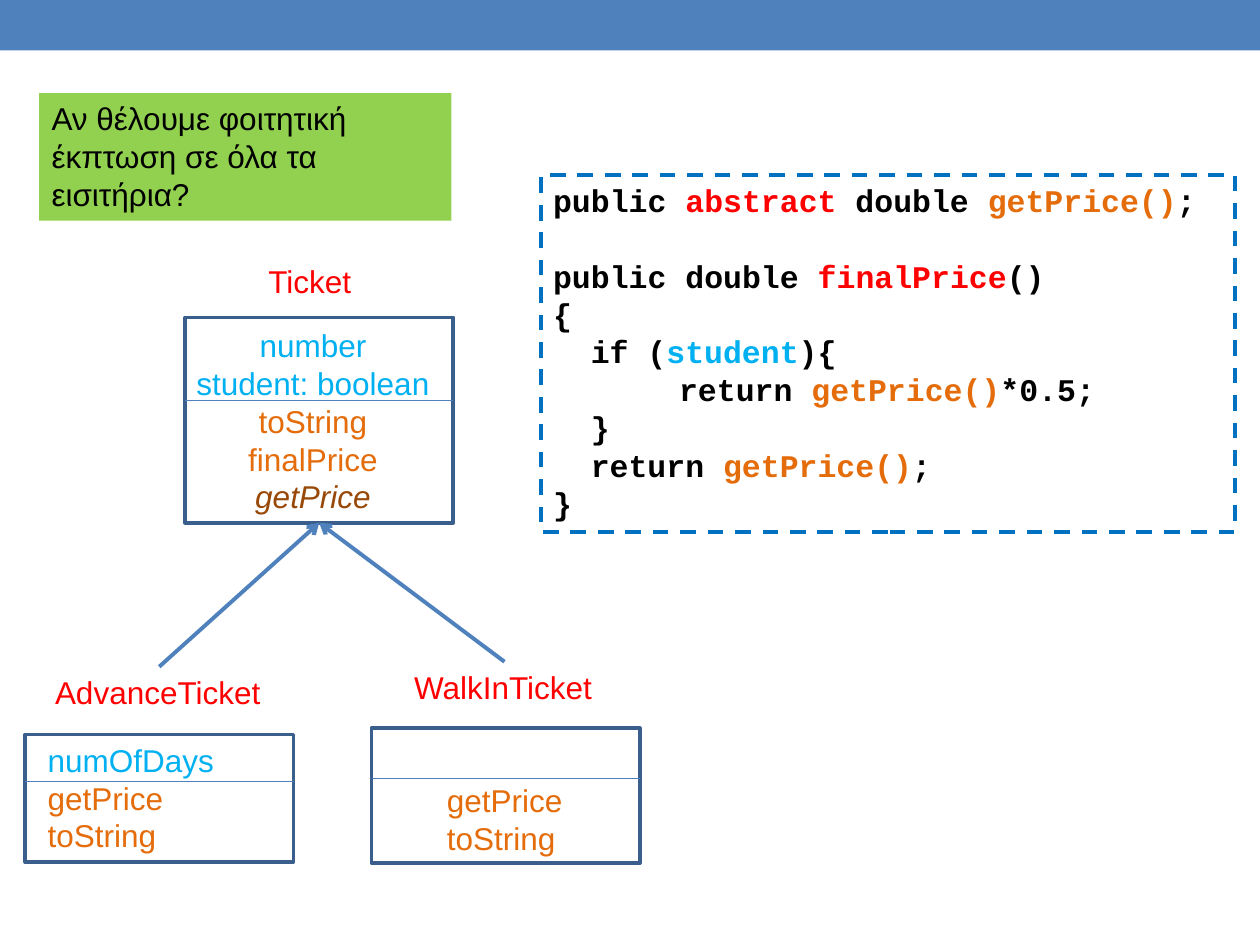
from lxml.etree import SubElement
from pptx import Presentation
from pptx.dml.color import RGBColor
from pptx.enum.dml import MSO_LINE
from pptx.enum.shapes import MSO_CONNECTOR, MSO_SHAPE
from pptx.enum.text import MSO_ANCHOR, MSO_AUTO_SIZE, PP_ALIGN
from pptx.oxml.ns import qn
from pptx.util import Cm, Pt

COLORS = {
    "black": "000000",
    "red": "FF0000",
    "cyan": "00B0F0",
    "orange": "E46C0A",
    "brown": "984807",
    "blue": "4F81BD",
    "border": "3A5F8C",
    "dash": "0070C0",
    "green": "92D050",
}
CLASS_WIDTH = 5.41
LABEL_HEIGHT = 1.02
LINE_HEIGHT = Pt(21.6)
STEP = 0.76  # width of two code characters

# Each code line: indent in cm, then (text, colour) runs
CODE = [
    (0, [("public ", "black"), ("abstract", "red"), (" double ", "black"),
         ("getPrice()", "orange"), (";", "black")]),
    (0, [("public double ", "black"), ("finalPrice", "red"), ("()", "black")]),
    (0, [("{", "black")]),
    (STEP, [("if (", "black"), ("student", "cyan"), ("){", "black")]),
    (2.54, [("return ", "black"), ("getPrice()", "orange"), ("*0.5;", "black")]),
    (STEP, [("}", "black")]),
    (STEP, [("return ", "black"), ("getPrice()", "orange"), (";", "black")]),
    (0, [("}", "black")]),
]


def color(name):
    return RGBColor.from_string(COLORS[name])


def add_rectangle(slide, box, fill=None, line=None, width=2.08):
    shape = slide.shapes.add_shape(MSO_SHAPE.RECTANGLE, *map(Cm, box))
    shape.shadow.inherit = False
    if fill:
        shape.fill.solid()
        shape.fill.fore_color.rgb = color(fill)
    else:
        shape.fill.background()
    if line:
        shape.line.color.rgb = color(line)
        shape.line.width = Pt(width)
    else:
        shape.line.fill.background()
    return shape


def prepare_frame(shape, wrap):
    frame = shape.text_frame
    frame.word_wrap = wrap
    frame.auto_size = MSO_AUTO_SIZE.SHAPE_TO_FIT_TEXT
    frame.vertical_anchor = MSO_ANCHOR.TOP
    return frame


def add_paragraph(frame, index, align=PP_ALIGN.LEFT):
    paragraph = frame.add_paragraph() if index else frame.paragraphs[0]
    paragraph.alignment = align
    paragraph.line_spacing = LINE_HEIGHT
    return paragraph


def add_run(paragraph, text, color_name, font="Arial"):
    run = paragraph.add_run()
    run.text = text
    run.font.name = font
    run.font.size = Pt(18)
    run.font.color.rgb = color(color_name)
    return run


def add_text(slide, box, lines, align=PP_ALIGN.LEFT):
    """Add a non-wrapping text box; lines are (text, colour) pairs."""
    shape = slide.shapes.add_textbox(*map(Cm, box))
    frame = prepare_frame(shape, wrap=False)
    for index, (text, color_name) in enumerate(lines):
        run = add_run(add_paragraph(frame, index, align), text, color_name)
        if color_name == "brown":  # abstract method
            run.font.italic = True
    return shape


def add_line(slide, start, end, width):
    line = slide.shapes.add_connector(MSO_CONNECTOR.STRAIGHT, *map(Cm, start + end))
    line.line.color.rgb = color("blue")
    line.line.width = Pt(width)
    SubElement(line._element.spPr, qn("a:effectLst"))
    return line


def add_class(slide, box, divider, label, name, members_box, members, align=PP_ALIGN.LEFT):
    """Add a class box with its name above; return the box and the name label."""
    left, top, height = box
    rectangle = add_rectangle(slide, (left, top, CLASS_WIDTH, height), line="border")
    add_text(slide, members_box, members, align)
    add_line(slide, (left, divider), (left + CLASS_WIDTH, divider), 0.75)
    name_label = add_text(slide, label + (LABEL_HEIGHT,), [(name, "red")])
    return rectangle, name_label


def add_inheritance(slide, child_label, parent):
    arrow = add_line(slide, (0, 0), (1, 1), 2.25)
    arrow.begin_connect(child_label, 0)
    arrow.end_connect(parent, 2)
    SubElement(arrow.line._get_or_add_ln(), qn("a:tailEnd"), type="arrow")


def add_note(slide):
    shape = add_rectangle(slide, (0.79, 1.88, 8.31, 2.57), fill="green")
    frame = prepare_frame(shape, wrap=True)
    add_run(add_paragraph(frame, 0),
            "Αν θέλουμε φοιτητική έκπτωση σε όλα τα εισιτήρια?", "black")


def add_code(slide):
    shape = add_rectangle(slide, (10.9, 3.53, 14, 7.19), line="dash", width=2.25)
    shape.line.dash_style = MSO_LINE.DASH
    frame = prepare_frame(shape, wrap=True)
    for index, (indent, runs) in enumerate(CODE):
        paragraph = add_paragraph(frame, index)
        paragraph._p.get_or_add_pPr().set("marL", str(Cm(indent)))
        for text, color_name in runs:
            add_run(paragraph, text, color_name, "Courier New").font.bold = True
    frame.paragraphs[1].space_before = LINE_HEIGHT


def main():
    presentation = Presentation()
    presentation.slide_width = Cm(25.4)
    presentation.slide_height = Cm(19.05)
    slide = presentation.slides.add_slide(presentation.slide_layouts[6])

    add_rectangle(slide, (0, 0, 25.4, 1.02), fill="blue")
    _, advance_label = add_class(
        slide, (0.51, 14.81, 2.57), 15.75, (0.86, 13.44, 4.7), "AdvanceTicket",
        (0.71, 14.81, 3.89, 2.57),
        [("numOfDays", "cyan"), ("getPrice", "orange"), ("toString", "orange")])
    _, walk_in_label = add_class(
        slide, (7.49, 14.68, 2.72), 15.7, (8.1, 13.34, 4.14), "WalkInTicket",
        (8.76, 15.62, 2.87, 1.8),
        [("getPrice", "orange"), ("toString", "orange")])
    ticket, _ = add_class(
        slide, (3.73, 6.4, 4.14), 8.08, (5.16, 5.16, 2.21), "Ticket",
        (3.68, 6.45, 5.26, 4.11),
        [("number", "cyan"), ("student: boolean", "cyan"), ("toString", "orange"),
         ("finalPrice", "orange"), ("getPrice", "brown")], PP_ALIGN.CENTER)
    for label in (advance_label, walk_in_label):
        add_inheritance(slide, label, ticket)
    add_note(slide)
    add_code(slide)
    presentation.save("out.pptx")


if __name__ == "__main__":
    main()
